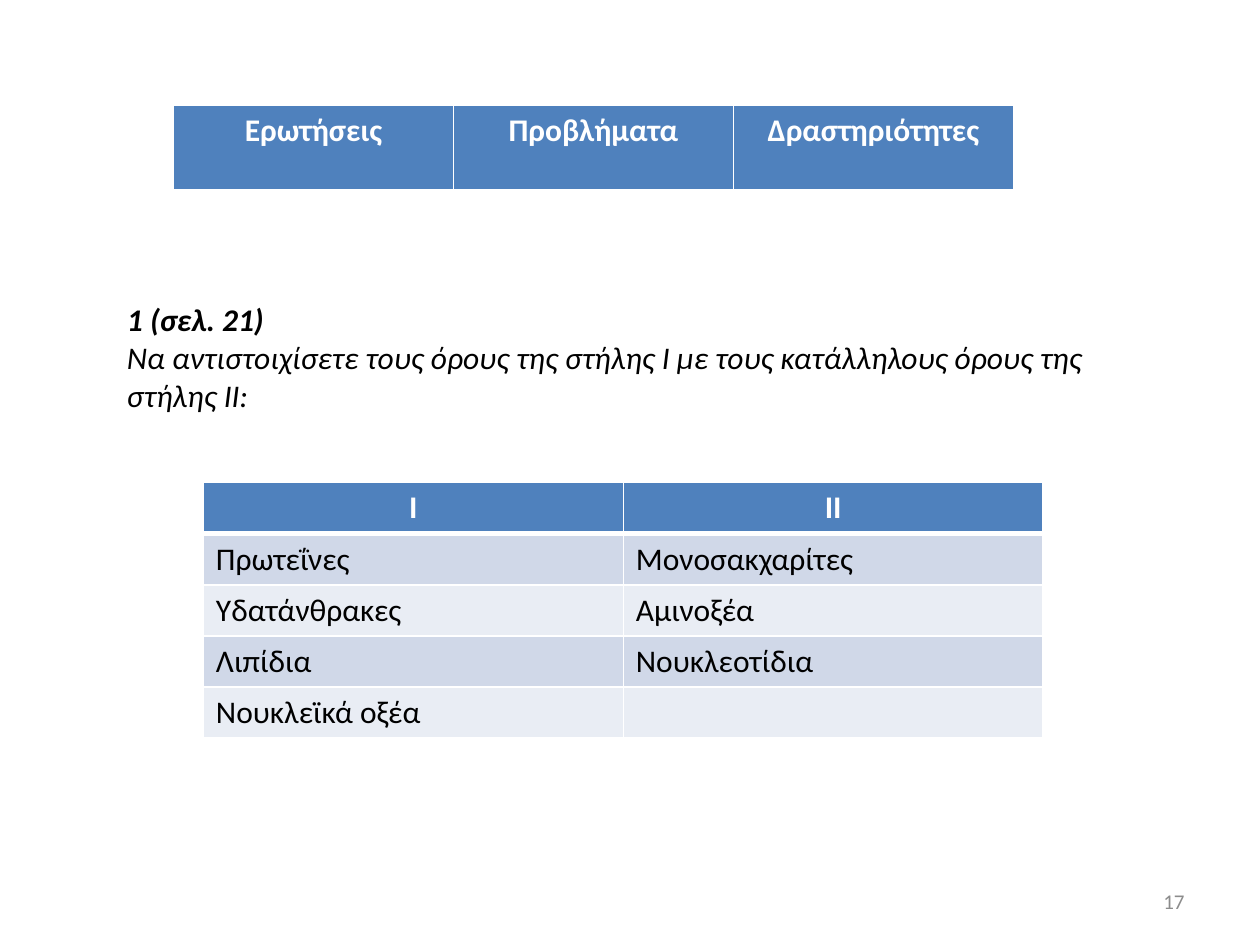
from lxml import etree
from pptx import Presentation
from pptx.dml.color import RGBColor
from pptx.enum.text import MSO_ANCHOR, PP_ALIGN
from pptx.oxml.ns import qn
from pptx.util import Cm, Pt

LEFT, CENTER, RIGHT = PP_ALIGN.LEFT, PP_ALIGN.CENTER, PP_ALIGN.RIGHT
MIDDLE = MSO_ANCHOR.MIDDLE

COLORS = {
    "head": "4F81BD",
    "odd": "D0D8E8",
    "even": "E9EDF4",
    "white": "FFFFFF",
    "black": "000000",
    "gray": "8C8C8C",
}
FONT = "Calibri"

TABS = [("Ερωτήσεις", "Προβλήματα", "Δραστηριότητες")]
TASK = [
    ("1 (σελ. 21)", True),
    ("Να αντιστοιχίσετε τους όρους της στήλης Ι με τους κατάλληλους "
     "όρους της στήλης ΙΙ:", False),
]
TERMS = [
    ("Ι", "ΙΙ"),
    ("Πρωτεΐνες", "Μονοσακχαρίτες"),
    ("Υδατάνθρακες", "Αμινοξέα"),
    ("Λιπίδια", "Νουκλεοτίδια"),
    ("Νουκλεϊκά οξέα", ""),
]
PAGE = "17"


def write(para, text, size=18, color="black", bold=False, italic=False,
          align=LEFT):
    para.alignment = align
    run = para.add_run()
    run.text = text
    font = run.font
    font.name, font.size = FONT, Pt(size)
    font.bold, font.italic = bold, italic
    font.color.rgb = RGBColor.from_string(COLORS[color])


def add_box(slide, left, top, width, height):
    frame = slide.shapes.add_textbox(
        Cm(left), Cm(top), Cm(width), Cm(height)).text_frame
    frame.word_wrap = True
    return frame


def add_edge(cell, side, width):
    line = etree.SubElement(cell._tc.get_or_add_tcPr(), qn("a:ln" + side),
                            w=str(Pt(width)))
    fill = etree.SubElement(line, qn("a:solidFill"))
    etree.SubElement(fill, qn("a:srgbClr"), val=COLORS["white"])


def add_grid(slide, rows, left, top, width, row_height):
    """Add a table with a header row and banded rows below it."""
    table = slide.shapes.add_table(
        len(rows), len(rows[0]), Cm(left), Cm(top), Cm(width),
        Cm(row_height * len(rows))).table
    for r, row in enumerate(rows):
        head = r == 0
        band = "head" if head else ("odd" if r % 2 else "even")
        for c, text in enumerate(row):
            cell = table.cell(r, c)
            for side in "LRTB":
                thick = (r, side) in ((0, "B"), (1, "T"))
                add_edge(cell, side, 3 if thick else 1)
            cell.fill.solid()
            cell.fill.fore_color.rgb = RGBColor.from_string(COLORS[band])
            write(cell.text_frame.paragraphs[0], text, bold=head,
                  color="white" if head else "black",
                  align=CENTER if head else LEFT)


def main():
    deck = Presentation()
    deck.slide_width, deck.slide_height = Cm(25.4), Cm(19.05)
    slide = deck.slides.add_slide(deck.slide_layouts[6])

    number = add_box(slide, 18.2, 17.66, 5.93, 1.01)
    number.vertical_anchor = MIDDLE
    write(number.paragraphs[0], PAGE, size=12, color="gray", align=RIGHT)

    add_grid(slide, TABS, 3.5, 2.13, 16.93, 1.72)

    task = add_box(slide, 2.31, 5.93, 20.6, 4.88)
    for i, (text, bold) in enumerate(TASK):
        para = task.add_paragraph() if i else task.paragraphs[0]
        write(para, text, bold=bold, italic=True)

    add_grid(slide, TERMS, 4.1, 9.73, 16.93, 1.03)

    deck.save("out.pptx")


if __name__ == "__main__":
    main()
